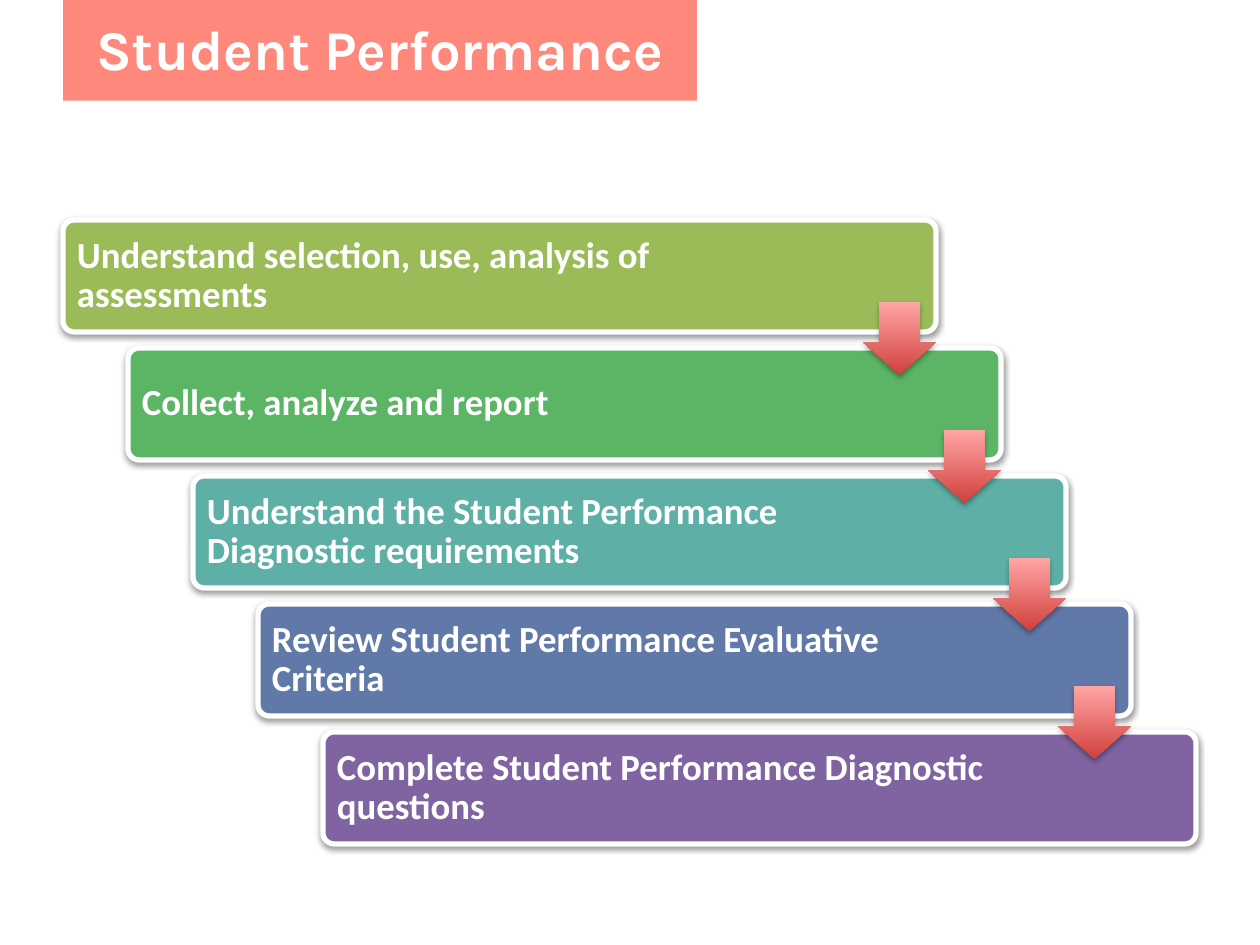
import pptx
import pptx.util
import pptx.dml.color
import pptx.enum.shapes
import pptx.enum.text
import pptx.oxml
import pptx.oxml.ns

PX = 914400 / 126
Pt = pptx.util.Pt
Kind = pptx.enum.shapes.MSO_SHAPE
Anchor = pptx.enum.text.MSO_ANCHOR
hue = pptx.dml.color.RGBColor.from_string
NS = pptx.oxml.ns.nsdecls("a")


def box(*sides):
    """Turn lengths in px into EMU."""
    return [round(side * PX) for side in sides]


def shade(shape, alpha, dist):
    """Give a shape a soft black shadow that falls straight down."""
    shape.shadow.inherit = False
    effects = shape._element.spPr.find(pptx.oxml.ns.qn("a:effectLst"))
    effects.append(pptx.oxml.parse_xml(
        f'<a:outerShdw {NS} blurRad="{Pt(3.1)}" dist="{Pt(dist)}" dir="5400000" rotWithShape="0">'
        f'<a:srgbClr val="000000"><a:alpha val="{alpha * 1000}"/></a:srgbClr></a:outerShdw>'))


deck = pptx.Presentation()
deck.slide_width, deck.slide_height = box(1260, 945)
slide = deck.slides.add_slide(deck.slide_layouts[5])
shapes = slide.shapes

# Title band
title = shapes.title
title.left, title.top, title.width, title.height = box(63, 8, 634, 80)
title.fill.solid()
title.fill.fore_color.rgb = hue("FF5C4C")
tint = title._element.spPr.find(".//" + pptx.oxml.ns.qn("a:srgbClr"))
tint.append(pptx.oxml.parse_xml(f'<a:alpha {NS} val="73000"/>'))
frame = title.text_frame
frame.text = "Student Performance"
frame.vertical_anchor = Anchor.MIDDLE
frame.auto_size = pptx.enum.text.MSO_AUTO_SIZE.SHAPE_TO_FIT_TEXT
para = frame.paragraphs[0]
para.alignment = pptx.enum.text.PP_ALIGN.CENTER
font = para.runs[0].font
for name, value in {"name": "Karla", "size": Pt(32), "bold": True}.items():
    setattr(font, name, value)
font.color.rgb = hue("FFFFFF")

# Staircase of steps
steps = [
    ("Understand selection, use, analysis of assessments", "9BBB59", 738),
    ("Collect, analyze and report", "5CB565", 728),
    ("Understand the Student Performance Diagnostic requirements", "5EAFA6", 728),
    ("Review Student Performance Evaluative Criteria", "6179A8", 728),
    ("Complete Student Performance Diagnostic questions", "8064A2", 728),
]
RIGHT, DOWN = 65, 128
inset = box(11)[0]
layout = {"word_wrap": True, "vertical_anchor": Anchor.MIDDLE,
          "margin_left": inset, "margin_right": inset,
          "margin_top": inset, "margin_bottom": inset}
style = {"name": "Calibri", "size": Pt(21), "bold": True}

for i, (words, color, width) in enumerate(steps):
    left, top = 63 + i * RIGHT, 220 + i * DOWN
    bar = shapes.add_shape(Kind.ROUNDED_RECTANGLE, *box(left, top, 873, 112))
    bar.adjustments[0] = 0.1
    bar.fill.solid()
    bar.fill.fore_color.rgb = hue(color)
    bar.line.color.rgb = hue("FFFFFF")
    bar.line.width = Pt(3)
    shade(bar, 38, 1.6)

    label = shapes.add_textbox(*box(left + 3, top + 3, width, 106))
    frame = label.text_frame
    for name, value in layout.items():
        setattr(frame, name, value)
    para = frame.paragraphs[0]
    para.line_spacing = 0.9
    run = para.add_run()
    run.text = words
    for name, value in style.items():
        setattr(run.font, name, value)
    run.font.color.rgb = hue("FFFFFF")

# Arrows from each step to the next
for i in range(len(steps) - 1):
    arrow = shapes.add_shape(Kind.DOWN_ARROW, *box(863 + i * RIGHT, 302 + i * DOWN, 73, 73))
    arrow.adjustments[0] = 0.55
    arrow.adjustments[1] = 0.45
    arrow.fill.gradient()
    arrow.fill.gradient_angle = 90
    for stop, color in zip(arrow.fill.gradient_stops, ("D1403C", "FFA6A5")):
        stop.color.rgb = hue(color)
    arrow.line.fill.background()
    shade(arrow, 35, 1.8)

deck.save("out.pptx")
